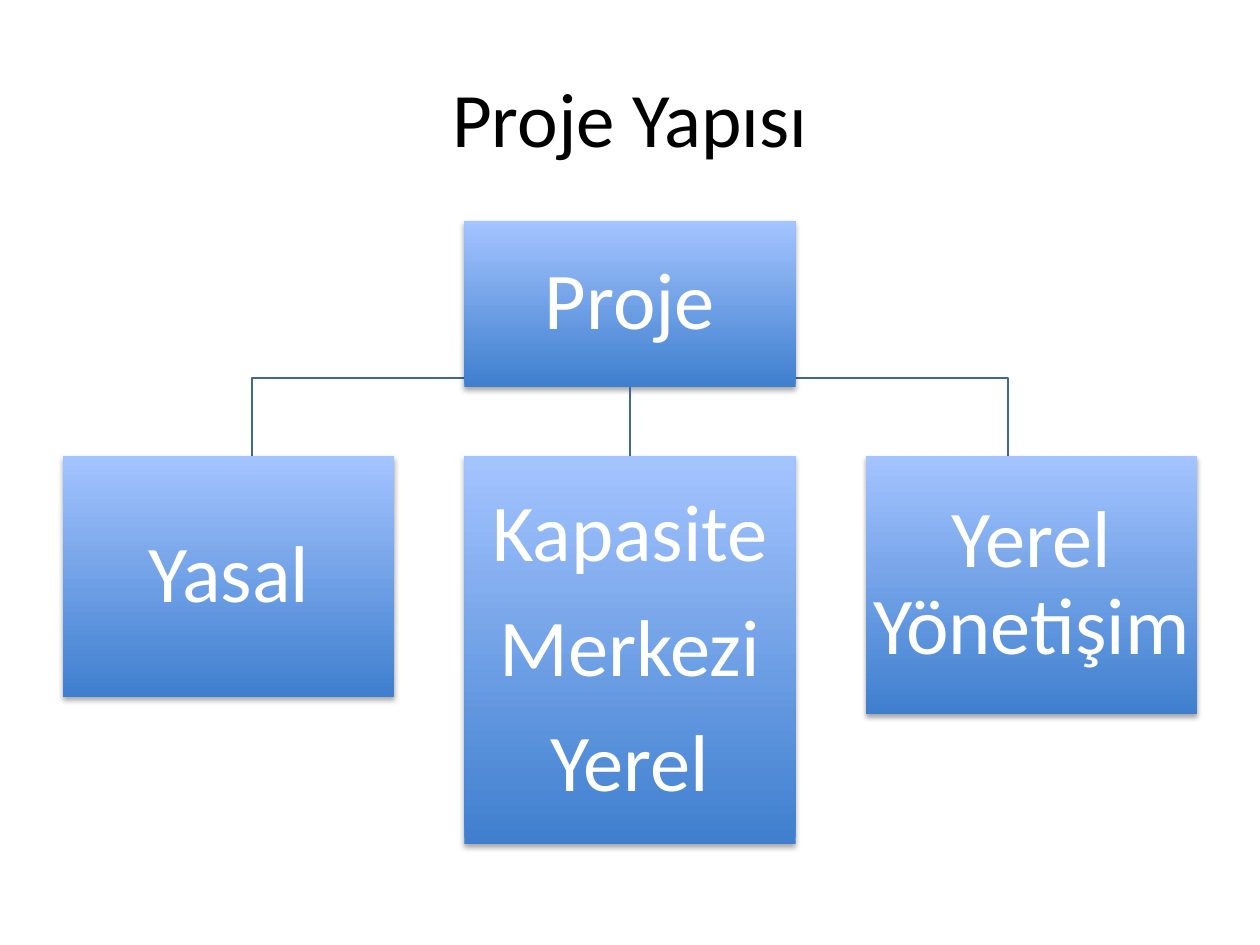
from lxml.etree import SubElement
from pptx import Presentation
from pptx.dml.color import RGBColor
from pptx.enum.shapes import MSO_CONNECTOR, MSO_SHAPE
from pptx.enum.text import MSO_ANCHOR, PP_ALIGN
from pptx.oxml.ns import qn
from pptx.util import Inches, Pt

COLORS = {
    "title": "000000",
    "text": "FFFFFF",
    "line": "3F6797",
    "bottom": "3F7FCE",
    "top": "A4C4FF",
    "shadow": "000000",
}
FONT = "Calibri"

# Three equal columns between the margins; lengths in inches
MARGIN, BOX_W = 0.5, 2.63
STEP = (10 - 2 * MARGIN - BOX_W) / 2
ROOT_Y, ROOT_H, CHILD_Y = 1.75, 1.32, 3.62
ROOT_BOTTOM = ROOT_Y + ROOT_H
BUS_Y = (ROOT_BOTTOM + CHILD_Y) / 2
CHILDREN = [
    (["Yasal"], 1.91),
    (["Kapasite", "Merkezi", "Yerel"], 3.08),
    (["Yerel Yönetişim"], 2.05),
]


def format_paragraph(p, size, color):
    p.alignment = PP_ALIGN.CENTER
    for r in p.runs:
        r.font.size = Pt(size)
        r.font.name = FONT
        r.font.color.rgb = RGBColor.from_string(COLORS[color])


def add_box(column, y, height, lines):
    """Add a gradient box with a soft shadow, one paragraph per line."""
    sp = s.shapes.add_shape(
        MSO_SHAPE.RECTANGLE, Inches(MARGIN + column * STEP), Inches(y),
        Inches(BOX_W), Inches(height))
    sp.line.fill.background()
    sp.fill.gradient()
    sp.fill.gradient_angle = 90
    for stop, position, name in zip(sp.fill.gradient_stops, (0, 1), ("bottom", "top")):
        stop.position = position
        stop.color.rgb = RGBColor.from_string(COLORS[name])

    sp.shadow.inherit = False
    effects = sp._element.spPr.find(qn("a:effectLst"))
    shadow = SubElement(effects, qn("a:outerShdw"), blurRad=str(Pt(3.1)),
                        dist=str(Pt(1.8)), dir="5400000", rotWithShape="0")
    color = SubElement(shadow, qn("a:srgbClr"), val=COLORS["shadow"])
    SubElement(color, qn("a:alpha"), val="35000")

    tf = sp.text_frame
    tf.word_wrap = True
    tf.vertical_anchor = MSO_ANCHOR.MIDDLE
    tf.margin_left = tf.margin_right = tf.margin_top = tf.margin_bottom = Inches(0.03)
    tf.text = "\n".join(lines)
    for p in tf.paragraphs:
        p.line_spacing = 0.9
        p.space_after = Pt(16)
        format_paragraph(p, 46, "text")
    return sp


prs = Presentation()
prs.slide_width, prs.slide_height = Inches(10), Inches(7.5)
s = prs.slides.add_slide(prs.slide_layouts[5])

title = s.shapes.title
title.left, title.top = Inches(MARGIN), Inches(0.3)
title.width, title.height = Inches(10 - 2 * MARGIN), Inches(1.25)
title.text_frame.text = "Proje Yapısı"
title.text_frame.vertical_anchor = MSO_ANCHOR.MIDDLE
format_paragraph(title.text_frame.paragraphs[0], 44, "title")

# Elbow branches to the outer columns
branches = []
for x in (5 + STEP, 5 - STEP):
    builder = s.shapes.build_freeform(5, ROOT_BOTTOM, scale=Inches(1))
    builder.add_line_segments([(5, BUS_Y), (x, BUS_Y), (x, CHILD_Y)], close=False)
    branch = builder.convert_to_shape()
    branch.fill.background()
    branch.shadow.inherit = False
    branches.append(branch)

root = add_box(1, ROOT_Y, ROOT_H, ["Proje"])
boxes = [add_box(i, CHILD_Y, height, lines)
         for i, (lines, height) in enumerate(CHILDREN)]

# Straight branch to the middle column
stem = s.shapes.add_connector(MSO_CONNECTOR.STRAIGHT, 0, 0, 0, 0)
stem.begin_connect(root, 2)
stem.end_connect(boxes[1], 0)
SubElement(stem._element.spPr, qn("a:effectLst"))
branches.append(stem)

for branch in branches:
    branch.line.color.rgb = RGBColor.from_string(COLORS["line"])
    branch.line.width = Pt(0.75)

prs.save("out.pptx")
